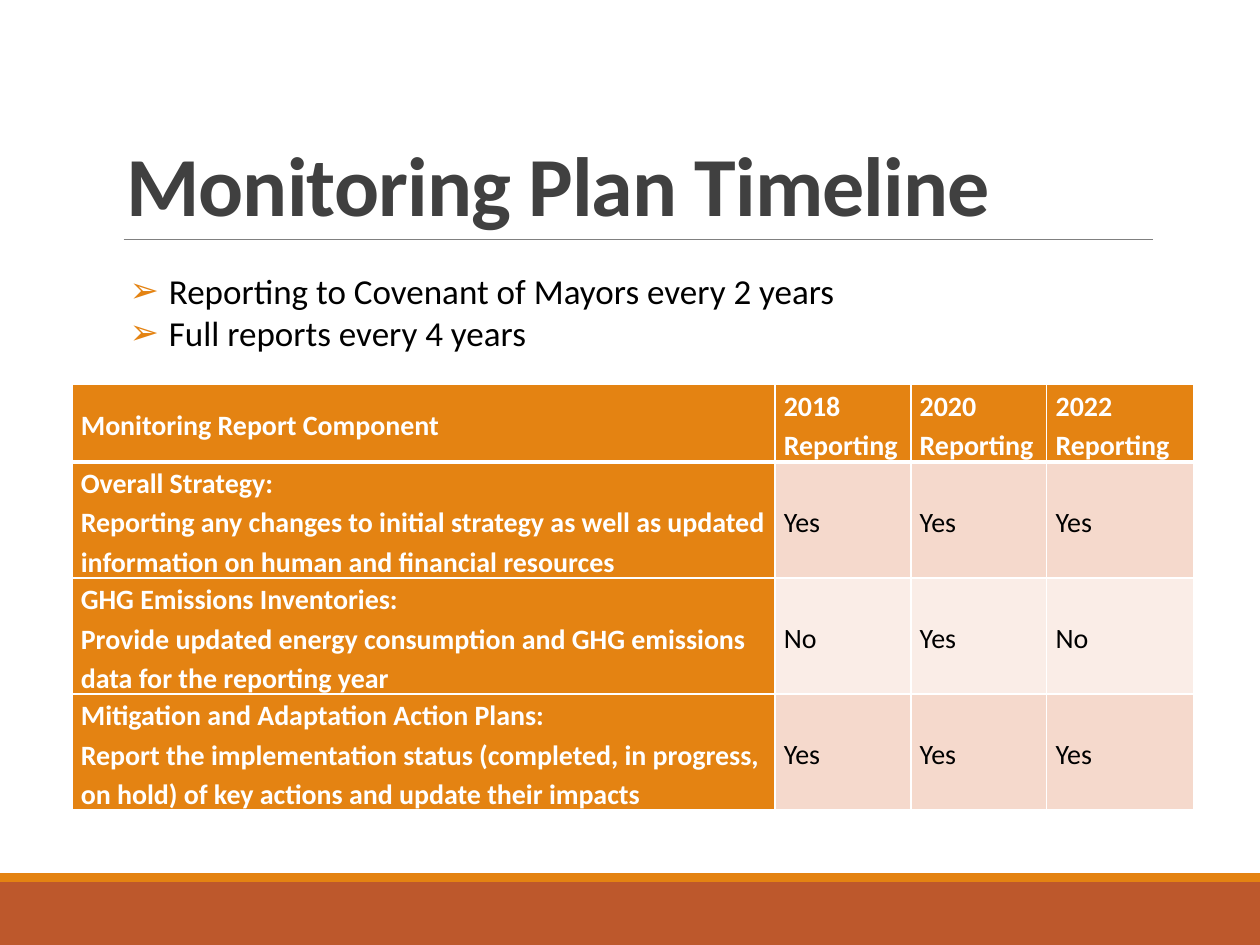
"""Build the monitoring plan timeline slide."""
import dataclasses

import lxml.etree
import pptx
import pptx.dml.color
import pptx.enum.shapes
import pptx.enum.text
import pptx.oxml.ns
import pptx.util

Cm = pptx.util.Cm
Pt = pptx.util.Pt
qn = pptx.oxml.ns.qn


@dataclasses.dataclass(frozen=True)
class Theme:
    font: str = "Calibri"
    title_size: int = 48
    list_size: int = 20
    table_size: int = 16
    title: str = "404040"
    text: str = "000000"
    light: str = "FFFFFF"
    accent: str = "E48312"
    footer: str = "BD582C"
    rule: str = "808080"
    bands: tuple = ("F5D9CC", "FAEDE7")


THEME = Theme()
BULLETS = ["Reporting to Covenant of Mayors every 2 years", "Full reports every 4 years"]
COLUMN_WIDTHS = [14.17, 2.74, 2.74, 2.97]
ROW_HEIGHTS = [1.56, 2.34, 2.34, 2.34]
ROWS = [
    ["Monitoring Report Component", "2018 Reporting", "2020 Reporting", "2022 Reporting"],
    ["Overall Strategy:\nReporting any changes to initial strategy as well as updated "
     "information on human and financial resources", "Yes", "Yes", "Yes"],
    ["GHG Emissions Inventories:\nProvide updated energy consumption and GHG emissions "
     "data for the reporting year", "No", "Yes", "No"],
    ["Mitigation and Adaptation Action Plans:\nReport the implementation status (completed, "
     "in progress, on hold) of key actions and update their impacts", "Yes", "Yes", "Yes"],
]


def rgb(value):
    return pptx.dml.color.RGBColor.from_string(value)


def place(shape, left, top, width, height):
    shape.left, shape.top = Cm(left), Cm(top)
    shape.width, shape.height = Cm(width), Cm(height)


def format_text(frame, size, color, bold=False, line_spacing=1.0):
    for paragraph in frame.paragraphs:
        paragraph.alignment = pptx.enum.text.PP_ALIGN.LEFT
        paragraph.line_spacing = line_spacing
        paragraph.space_before = Pt(0)
        for span in paragraph.runs:
            span.font.name = THEME.font
            span.font.size = Pt(size)
            span.font.bold = bold
            span.font.color.rgb = rgb(color)


def add_bar(page, top, height, color):
    bar = page.shapes.add_shape(
        pptx.enum.shapes.MSO_SHAPE.RECTANGLE, 0, Cm(top), Cm(25.4), Cm(height))
    bar.shadow.inherit = False
    bar.fill.solid()
    bar.fill.fore_color.rgb = rgb(color)
    bar.line.fill.background()


def add_rule(page, left, right, top):
    rule = page.shapes.add_connector(
        pptx.enum.shapes.MSO_CONNECTOR.STRAIGHT, Cm(left), Cm(top), Cm(right), Cm(top))
    rule.line.color.rgb = rgb(THEME.rule)
    rule.line.width = Pt(0.5)
    lxml.etree.SubElement(rule._element.spPr, qn("a:effectLst"))


def set_title(page, text):
    title = page.shapes.title
    place(title, 2.29, 0.79, 20.96, 4.04)
    frame = title.text_frame
    frame.text = text
    frame.vertical_anchor = pptx.enum.text.MSO_ANCHOR.BOTTOM
    frame.auto_size = pptx.enum.text.MSO_AUTO_SIZE.NONE
    format_text(frame, THEME.title_size, THEME.title, bold=True, line_spacing=0.85)
    frame.paragraphs[0].runs[0].font._element.set("spc", "-50")


def set_list(page, items):
    body = page.placeholders[1]
    place(body, 2.36, 5.31, 14.86, 1.96)
    frame = body.text_frame
    frame.text = "\n".join(items)
    frame.word_wrap = False
    frame.auto_size = pptx.enum.text.MSO_AUTO_SIZE.SHAPE_TO_FIT_TEXT
    format_text(frame, THEME.list_size, THEME.text)
    for paragraph in frame.paragraphs:
        properties = paragraph._p.get_or_add_pPr()
        properties.set("marL", str(Cm(0.79)))
        properties.set("indent", str(Cm(-0.79)))
        color = lxml.etree.SubElement(properties, qn("a:buClr"))
        lxml.etree.SubElement(color, qn("a:srgbClr"), val=THEME.accent)
        lxml.etree.SubElement(properties, qn("a:buChar"), char="➢")


def set_borders(cell, top, bottom):
    properties = cell._tc.get_or_add_tcPr()
    for side, width in (("L", 1), ("R", 1), ("T", top), ("B", bottom)):
        line = lxml.etree.SubElement(properties, qn(f"a:ln{side}"), w=str(Pt(width)))
        fill = lxml.etree.SubElement(line, qn("a:solidFill"))
        lxml.etree.SubElement(fill, qn("a:srgbClr"), val=THEME.light)


def fill_cell(cell, text, row, column):
    heading = row == 0 or column == 0
    cell.text_frame.text = text
    cell.vertical_anchor = pptx.enum.text.MSO_ANCHOR.MIDDLE
    cell.margin_left = cell.margin_right = Cm(0.18)
    cell.margin_top = cell.margin_bottom = 0
    format_text(cell.text_frame, THEME.table_size,
                THEME.light if heading else THEME.text, heading, 1.15)
    set_borders(cell, top=3 if row == 1 else 1, bottom=3 if row == 0 else 1)
    cell.fill.solid()
    cell.fill.fore_color.rgb = rgb(THEME.accent if heading else THEME.bands[(row - 1) % 2])


def add_report_table(page):
    table = page.shapes.add_table(
        len(ROWS), len(COLUMN_WIDTHS), Cm(1.45), Cm(7.75),
        Cm(sum(COLUMN_WIDTHS)), Cm(sum(ROW_HEIGHTS))).table
    for column, width in zip(table.columns, COLUMN_WIDTHS):
        column.width = Cm(width)
    for row, height in zip(table.rows, ROW_HEIGHTS):
        row.height = Cm(height)
    for row, texts in enumerate(ROWS):
        for column, text in enumerate(texts):
            fill_cell(table.cell(row, column), text, row, column)


def main():
    deck = pptx.Presentation()
    deck.slide_width, deck.slide_height = Cm(25.4), Cm(19.05)
    page = deck.slides.add_slide(deck.slide_layouts[1])
    add_bar(page, 17.78, 1.27, THEME.footer)
    add_bar(page, 17.6, 0.18, THEME.accent)
    add_rule(page, 2.49, 23.24, 4.83)
    set_title(page, "Monitoring Plan Timeline")
    add_report_table(page)
    set_list(page, BULLETS)
    deck.save("out.pptx")


if __name__ == "__main__":
    main()
